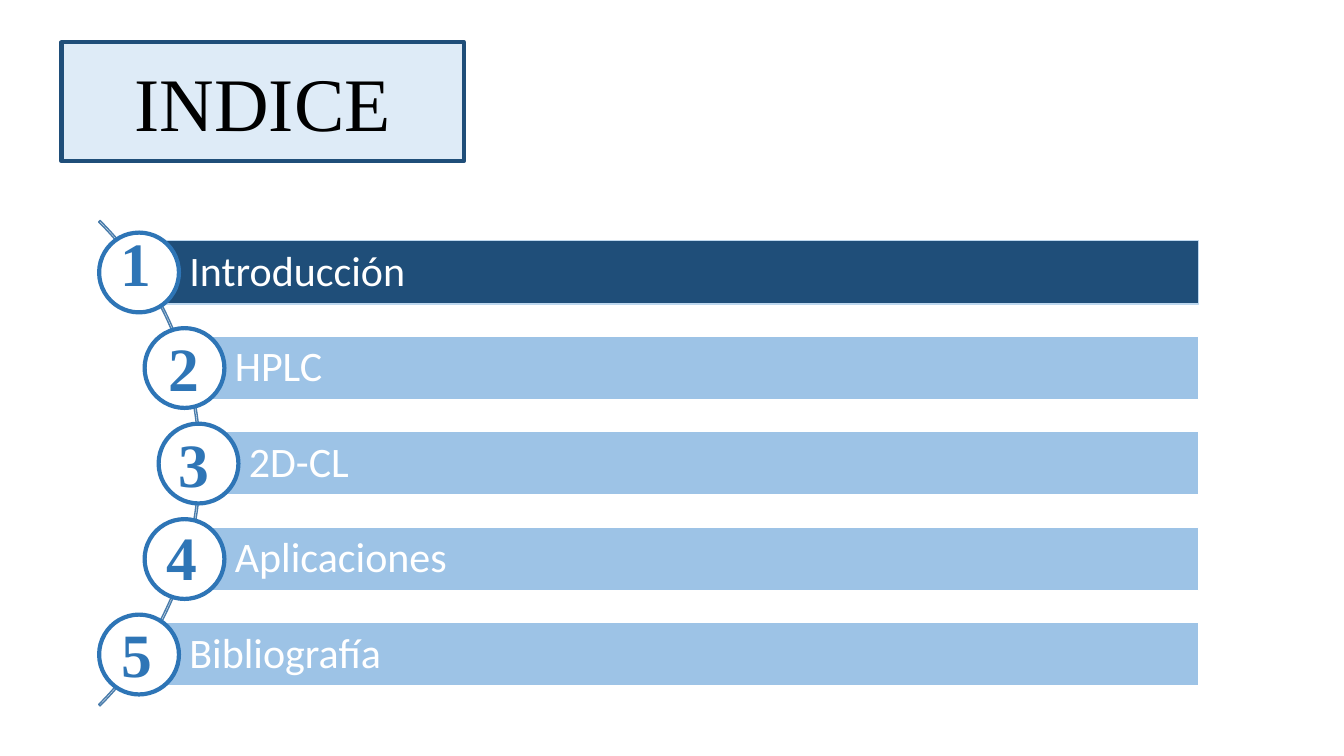
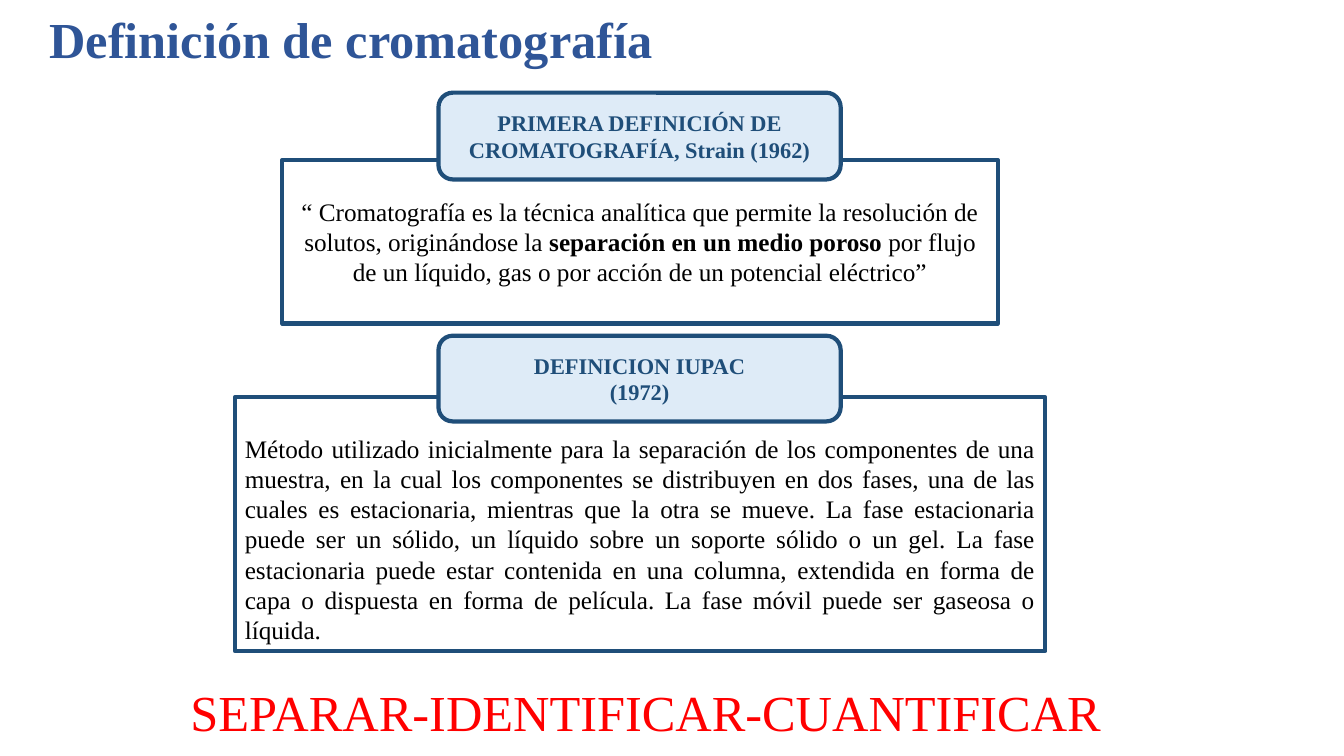
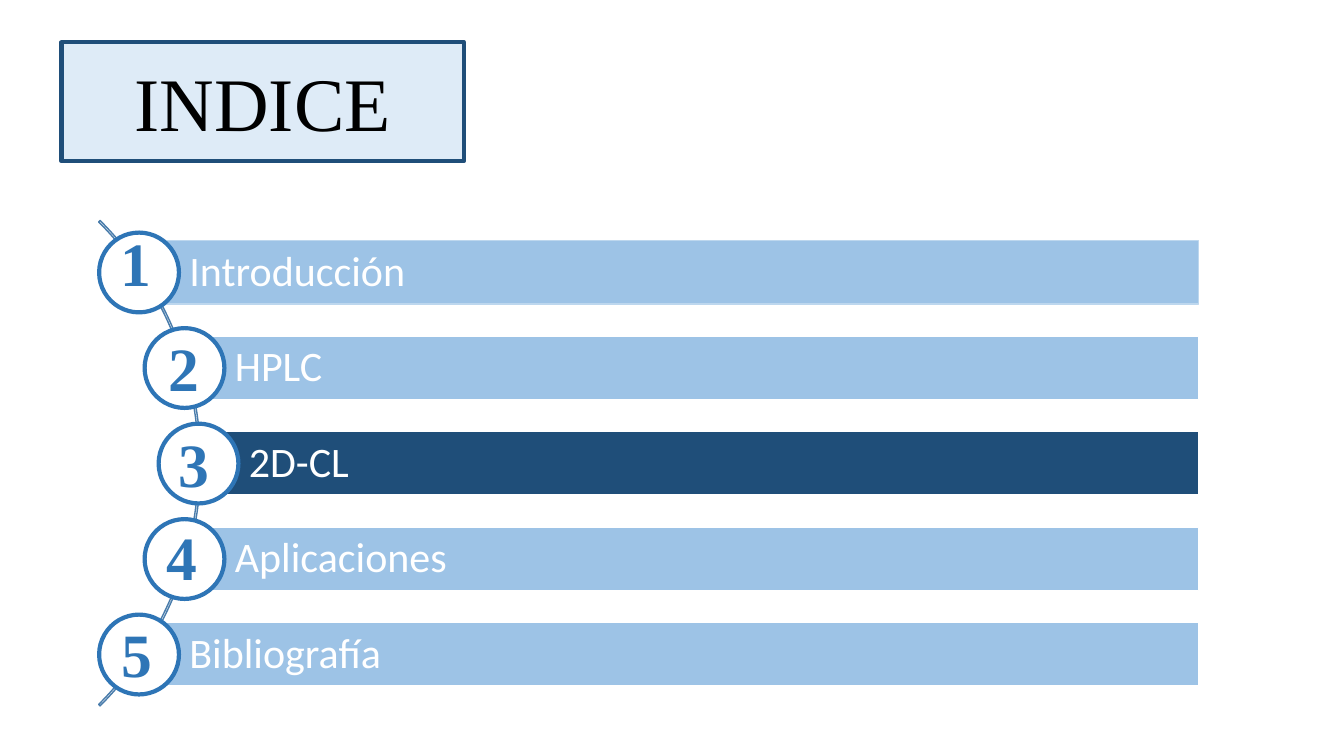
from dataclasses import dataclass, replace

from lxml.etree import SubElement
from pptx import Presentation
from pptx.dml.color import RGBColor
from pptx.enum.shapes import MSO_SHAPE
from pptx.enum.text import MSO_ANCHOR, MSO_AUTO_SIZE, PP_ALIGN
from pptx.oxml.ns import qn
from pptx.shapes.autoshape import Shape
from pptx.slide import Slide
from pptx.util import Pt

# Shared colours
NAVY, PALE, SKY, BLUE = "1F4E79", "DEEBF7", "9DC3E6", "2E75B6"
WHITE, BLACK, RED = "FFFFFF", "000000", "FF0000"


@dataclass(frozen=True)
class Box:
    left: float
    top: float
    width: float
    height: float


@dataclass(frozen=True)
class Font:
    size: float
    color: str = BLACK
    bold: bool = False
    name: str = "Times New Roman"


@dataclass(frozen=True)
class Span:
    text: str
    font: Font


@dataclass(frozen=True)
class Step:
    label: str
    left: float
    num_x: float
    num_y: float


@dataclass(frozen=True)
class Panel:
    frame: Box
    tag: Box
    head: list[str]
    lines: list[list[Span]]
    align: PP_ALIGN


# Shared text styles
HEAD = Font(36, "2F5597", True)
TAG = Font(16, NAVY, True)
BODY = Font(18)
STRONG = replace(BODY, bold=True)
LABEL = Font(30, WHITE, name="Calibri")
DIGIT = Font(44, BLUE, True)

# Index rows
ROW_TOP, ROW_GAP, ROW_H, ROW_END, RING = 172, 68.22, 45.3, 856, 57
STEPS = [
    Step("Introducción", 99.3, 79.2, 157),
    Step("HPLC", 131.8, 113, 231.8),
    Step("2D-CL", 141.8, 120.2, 301),
    Step("Aplicaciones", 131.8, 111.6, 367.2),
    Step("Bibliografía", 99.3, 80, 436.3),
]

# Definition panels
PANELS = [
    Panel(
        Box(201.6, 114.5, 511.2, 116.6), Box(313.2, 66.2, 287.3, 62),
        ["PRIMERA DEFINICIÓN DE CROMATOGRAFÍA, Strain (1962)"],
        [
            [Span("“ Cromatografía es la técnica analítica que permite "
                  "la resolución de", BODY)],
            [Span("solutos, originándose la ", BODY),
             Span("separación en un medio poroso ", STRONG),
             Span("por flujo", BODY)],
            [Span("de un líquido, gas o por acción de un potencial "
                  "eléctrico”", BODY)],
        ],
        PP_ALIGN.CENTER,
    ),
    Panel(
        Box(167.8, 283.7, 578.9, 181.4), Box(313.2, 239.8, 287.3, 61.2),
        ["DEFINICION IUPAC", "(1972)"],
        [[Span(
            "Método utilizado inicialmente para la separación de los "
            "componentes de una muestra, en la cual los componentes se "
            "distribuyen en dos fases, una de las cuales es estacionaria, "
            "mientras que la otra se mueve. La fase estacionaria puede ser "
            "un sólido, un líquido sobre un soporte sólido o un gel. La fase "
            "estacionaria puede estar contenida en una columna, extendida en "
            "forma de capa o dispuesta en forma de película. La fase móvil "
            "puede ser gaseosa o líquida.", BODY)]],
        PP_ALIGN.JUSTIFY,
    ),
]


def tint(code: str) -> RGBColor:
    return RGBColor.from_string(code)


def paint(shape: Shape, fill: str | None, line: str, width: float) -> None:
    if fill:
        shape.fill.solid()
        shape.fill.fore_color.rgb = tint(fill)
    else:
        shape.fill.background()
    shape.line.color.rgb = tint(line)
    shape.line.width = Pt(width)


def draw(slide: Slide, kind: MSO_SHAPE, box: Box, fill: str | None,
         line: str, width: float = 3) -> Shape:
    shape = slide.shapes.add_shape(
        kind, Pt(box.left), Pt(box.top), Pt(box.width), Pt(box.height))
    shape.shadow.inherit = False
    paint(shape, fill, line, width)
    return shape


def write(shape: Shape, lines: list[list[Span]],
          align: PP_ALIGN = PP_ALIGN.LEFT,
          anchor: MSO_ANCHOR = MSO_ANCHOR.TOP,
          left: float = 7.2, top: float = 3.6, lead: float = 1) -> None:
    frame = shape.text_frame
    frame.word_wrap = True
    frame.auto_size = MSO_AUTO_SIZE.NONE
    frame.vertical_anchor = anchor
    frame.margin_left, frame.margin_top = Pt(left), Pt(top)
    for i, line in enumerate(lines):
        para = frame.add_paragraph() if i else frame.paragraphs[0]
        para.alignment, para.line_spacing = align, lead
        for span in line:
            run = para.add_run()
            run.text = span.text
            run.font.size = Pt(span.font.size)
            run.font.bold = span.font.bold
            run.font.name = span.font.name
            run.font.color.rgb = tint(span.font.color)


def note(slide: Slide, box: Box, text: str, font: Font) -> None:
    shape = slide.shapes.add_textbox(
        Pt(box.left), Pt(box.top), Pt(box.width), Pt(box.height))
    write(shape, [[Span(text, font)]])


def place(slide: Slide, box: Box) -> Shape:
    title = slide.shapes.title
    title.left, title.top = Pt(box.left), Pt(box.top)
    title.width, title.height = Pt(box.width), Pt(box.height)
    return title


def index(slide: Slide, active: int) -> None:
    # Title in a rounded frame
    title = place(slide, Box(44, 30.2, 287.3, 85))
    geom = SubElement(title.element.spPr, qn("a:prstGeom"), prst="roundRect")
    SubElement(geom, qn("a:avLst"))
    paint(title, PALE, NAVY, 3)
    write(title, [[Span("INDICE", Font(54))]],
          PP_ALIGN.CENTER, MSO_ANCHOR.MIDDLE)

    # Arc behind the rows
    arc = draw(slide, MSO_SHAPE.BLOCK_ARC, Box(-347, 85.7, 490.3, 490.3),
               None, "497CAB", 1)
    for i, value in enumerate((189, 27, 0.003)):
        arc.adjustments[i] = value

    # Bars, rings and digits
    for i, step in enumerate(STEPS):
        top = ROW_TOP + i * ROW_GAP
        bar = draw(slide, MSO_SHAPE.RECTANGLE,
                   Box(step.left, top, ROW_END - step.left, ROW_H),
                   NAVY if i == active else SKY,
                   WHITE if i else "BDD7EE", 1)
        write(bar, [[Span(step.label, LABEL)]], anchor=MSO_ANCHOR.MIDDLE,
              left=36, lead=0.9)
        draw(slide, MSO_SHAPE.OVAL,
             Box(step.left - RING / 2, top + (ROW_H - RING) / 2, RING, RING),
             WHITE, BLUE)
        note(slide, Box(step.num_x, step.num_y, 47.5, 60.5),
             str(i + 1), DIGIT)


def define(slide: Slide) -> None:
    title = place(slide, Box(28, 2.2, 525.6, 51))
    write(title, [[Span("Definición de cromatografía", HEAD)]])

    # Framed text with a tag on its top edge
    for panel in PANELS:
        frame = draw(slide, MSO_SHAPE.RECTANGLE, panel.frame, None, NAVY)
        write(frame, panel.lines, panel.align, top=25.5)
        tag = draw(slide, MSO_SHAPE.ROUNDED_RECTANGLE, panel.tag, PALE, NAVY)
        write(tag, [[Span(text, TAG)] for text in panel.head],
              PP_ALIGN.CENTER, MSO_ANCHOR.MIDDLE)

    # Closing words
    note(slide, Box(128.9, 483, 715.7, 51),
         "SEPARAR-IDENTIFICAR-CUANTIFICAR", Font(36, RED))


def main() -> None:
    deck = Presentation()
    deck.slide_width, deck.slide_height = Pt(960), Pt(540)
    layout = deck.slide_layouts[5]
    index(deck.slides.add_slide(layout), 0)
    define(deck.slides.add_slide(layout))
    index(deck.slides.add_slide(layout), 2)
    deck.save("out.pptx")


if __name__ == "__main__":
    main()
